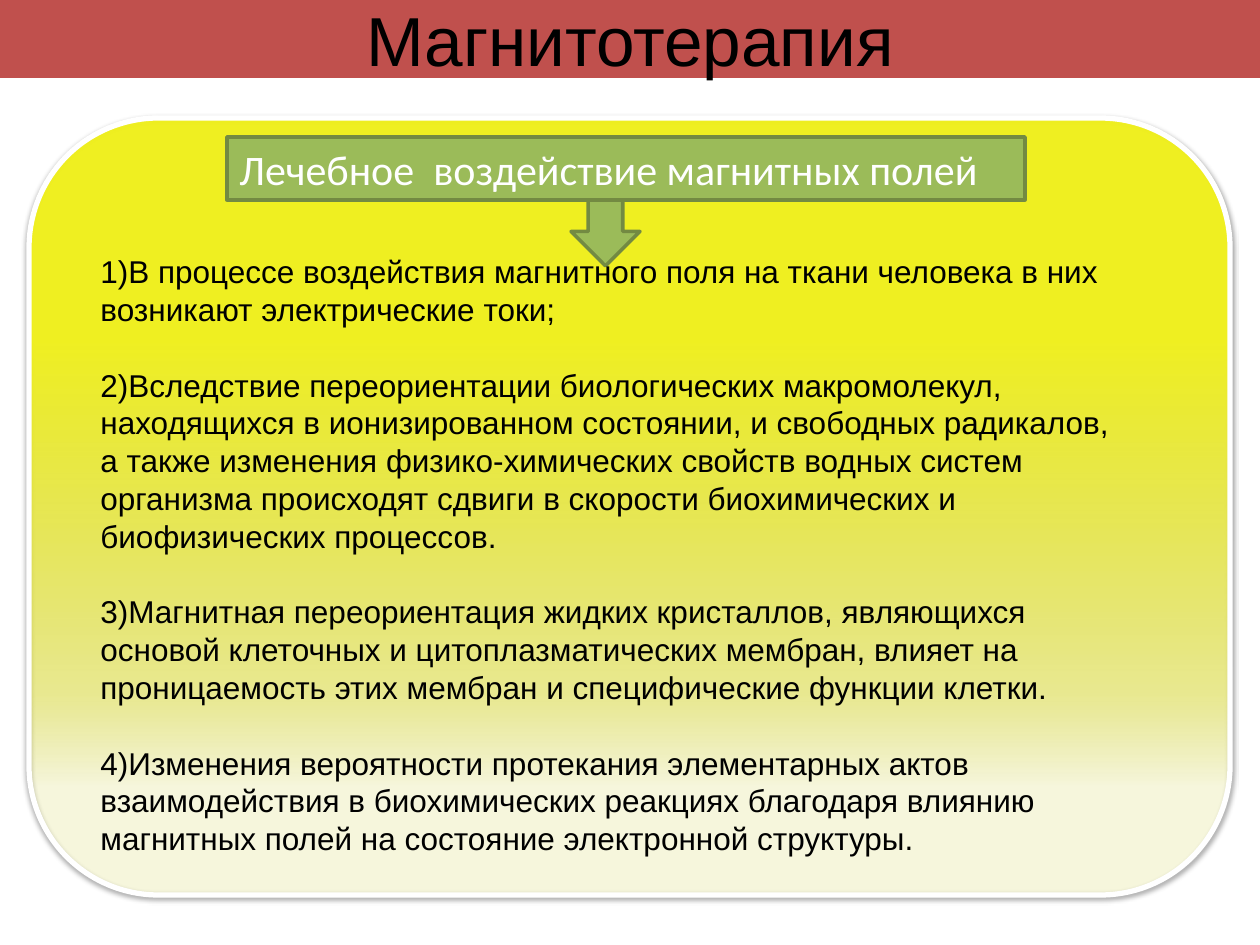
from lxml.etree import SubElement
from pptx import Presentation
from pptx.dml.color import RGBColor
from pptx.enum.shapes import MSO_SHAPE
from pptx.enum.text import MSO_ANCHOR, PP_ALIGN
from pptx.oxml import parse_xml
from pptx.oxml.ns import nsdecls, qn
from pptx.util import Emu, Pt

BLACK = RGBColor(0x00, 0x00, 0x00)
WHITE = RGBColor(0xFF, 0xFF, 0xFF)
YELLOW = RGBColor(0xFF, 0xFF, 0x00)
RED = RGBColor(0xC0, 0x50, 0x4D)
GREEN = RGBColor(0x9B, 0xBB, 0x59)
DARK_GREEN = RGBColor(0x73, 0x8A, 0x42)

PANEL_STOPS = [(29, 80), (75, 33), (86, 10)]
EFFECTS = [
    "В процессе воздействия магнитного поля на ткани человека в них возникают "
    "электрические токи;",
    "Вследствие переориентации биологических макромолекул, находящихся в "
    "ионизированном состоянии, и свободных радикалов, а также изменения "
    "физико-химических свойств водных систем организма происходят сдвиги в "
    "скорости биохимических и биофизических процессов.",
    "Магнитная переориентация жидких кристаллов, являющихся основой клеточных и "
    "цитоплазматических мембран, влияет на проницаемость этих мембран и "
    "специфические функции клетки.",
    "Изменения вероятности протекания элементарных актов взаимодействия в "
    "биохимических реакциях благодаря влиянию  магнитных полей на состояние "
    "электронной структуры.",
]


class SlideBuilder:
    scale = 914400 / 126

    def __init__(self, deck):
        deck.slide_width, deck.slide_height = self.emu(1260, 945)
        self.page = deck.slides.add_slide(deck.slide_layouts[6])

    def emu(self, *lengths):
        return [Emu(round(length * self.scale)) for length in lengths]

    def shape(self, kind, place, fill, line=None, width=2):
        shape = self.page.shapes.add_shape(kind, *self.emu(*place))
        shape.shadow.inherit = False
        shape.fill.solid()
        shape.fill.fore_color.rgb = fill
        if line is None:
            shape.line.fill.background()
        else:
            shape.line.color.rgb = line
            shape.line.width = Pt(width)
        return shape

    def panel(self, place, color, stops):
        panel = self.shape(MSO_SHAPE.ROUNDED_RECTANGLE, place, color, WHITE, 3)
        properties = panel.element.spPr
        stop_xml = "".join(
            f'<a:gs pos="{position * 1000}"><a:srgbClr val="{color}">'
            f'<a:alpha val="{opacity * 1000}"/></a:srgbClr></a:gs>'
            for position, opacity in stops
        )
        gradient = parse_xml(
            f'<a:gradFill {nsdecls("a")} rotWithShape="1"><a:gsLst>{stop_xml}</a:gsLst>'
            '<a:lin ang="5400000" scaled="0"/></a:gradFill>'
        )
        properties.replace(properties.find(qn("a:solidFill")), gradient)
        shadow = SubElement(
            properties.find(qn("a:effectLst")), qn("a:outerShdw"),
            blurRad=str(Pt(3.1)), dist=str(Pt(1.6)), dir="5400000", rotWithShape="0",
        )
        shade = SubElement(shadow, qn("a:srgbClr"), val=str(BLACK))
        SubElement(shade, qn("a:alpha"), val="38000")

    def fill_text(self, box, lines, font, anchor=MSO_ANCHOR.TOP, **layout):
        frame = box.text_frame
        frame.word_wrap = True
        frame.vertical_anchor = anchor
        for index, line in enumerate(lines):
            para = frame.add_paragraph() if index else frame.paragraphs[0]
            para.alignment = PP_ALIGN.LEFT
            for name, value in layout.items():
                if index or name != "space_before":
                    setattr(para, name, value)
            span = para.add_run()
            span.text = line
            span.font.color.rgb = font["color"]
            for name in ("name", "size"):
                setattr(span.font, name, font[name])

    def text(self, place, lines, font, **layout):
        box = self.page.shapes.add_textbox(*self.emu(*place))
        self.fill_text(box, lines, font, **layout)


def main():
    deck = Presentation()
    builder = SlideBuilder(deck)

    builder.panel((29, 118, 1201, 777), YELLOW, PANEL_STOPS)

    title = builder.shape(MSO_SHAPE.RECTANGLE, (0, 0, 1260, 78), RED)
    builder.fill_text(
        title, ["Магнитотерапия"],
        {"name": "Arial", "size": Pt(39.6), "color": BLACK},
        anchor=MSO_ANCHOR.MIDDLE, alignment=PP_ALIGN.CENTER,
    )

    builder.shape(MSO_SHAPE.DOWN_ARROW, (571, 197, 69, 69), GREEN, DARK_GREEN)
    heading = builder.shape(
        MSO_SHAPE.RECTANGLE, (227, 137, 798, 63), GREEN, DARK_GREEN
    )
    builder.fill_text(
        heading, ["Лечебное  воздействие магнитных полей"],
        {"name": "Calibri", "size": Pt(24), "color": WHITE},
    )

    builder.text(
        (88, 246, 1053, 624),
        [f"{number}){effect}" for number, effect in enumerate(EFFECTS, 1)],
        {"name": "Arial", "size": Pt(18), "color": BLACK},
        line_spacing=Pt(21.6), space_before=Pt(21.6),
    )
    deck.save("out.pptx")


if __name__ == "__main__":
    main()
